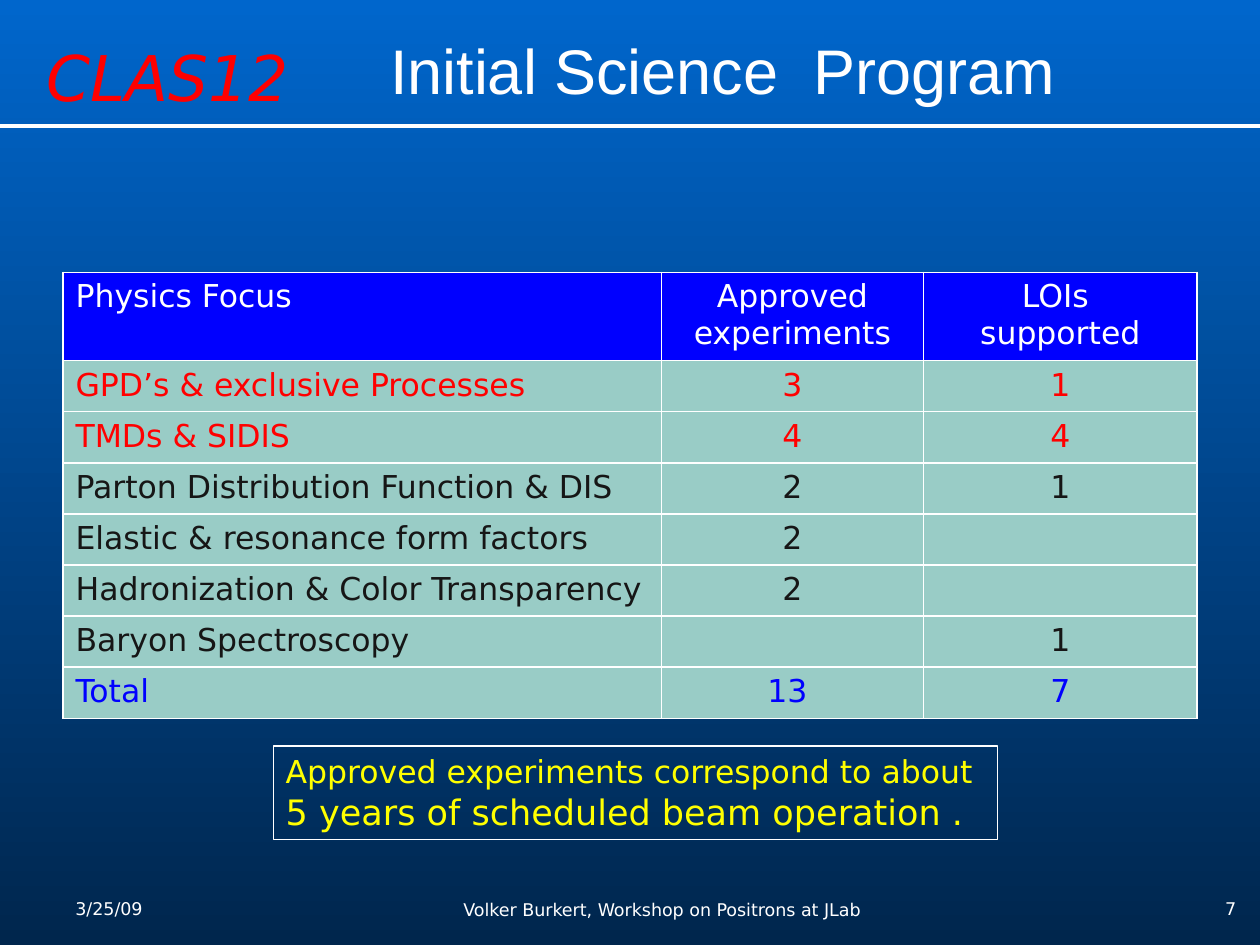
"""Build the CLAS12 initial science program slide."""
from lxml.etree import SubElement
from pptx import Presentation
from pptx.dml.color import RGBColor
from pptx.enum.shapes import MSO_CONNECTOR
from pptx.enum.text import MSO_ANCHOR, PP_ALIGN
from pptx.oxml.ns import qn
from pptx.util import Cm, Pt

WHITE = RGBColor(0xFF, 0xFF, 0xFF)
RED = RGBColor(0xFF, 0x00, 0x00)
BLUE = RGBColor(0x00, 0x00, 0xFF)
YELLOW = RGBColor(0xFF, 0xFF, 0x00)
DARK = RGBColor(0x16, 0x16, 0x16)
TEAL = RGBColor(0x99, 0xCC, 0xC6)
SKY = RGBColor(0x00, 0x66, 0xCC)
NAVY = RGBColor(0x00, 0x26, 0x4D)


def add_run(paragraph, text, size, color, font="DejaVu Sans", italic=False):
    run = paragraph.add_run()
    run.text = text
    run.font.size = Pt(size)
    run.font.name = font
    run.font.italic = italic
    run.font.color.rgb = color


def add_text(slide, box, alignment=PP_ALIGN.LEFT, wrap=True):
    shape = slide.shapes.add_textbox(*[Cm(length) for length in box])
    shape.text_frame.word_wrap = wrap
    paragraph = shape.text_frame.paragraphs[0]
    paragraph.alignment = alignment
    return shape, paragraph


presentation = Presentation()
presentation.slide_width = Cm(25.4)
presentation.slide_height = Cm(19.05)
slide = presentation.slides.add_slide(presentation.slide_layouts[6])

background = slide.background.fill
background.gradient()
background.gradient_angle = 270
for stop, color in zip(background.gradient_stops, (SKY, NAVY)):
    stop.color.rgb = color

title, paragraph = add_text(slide, (6.99, 0.2, 14.81, 2.41), PP_ALIGN.CENTER)
title.text_frame.vertical_anchor = MSO_ANCHOR.MIDDLE
add_run(paragraph, " Initial Science  Program", 36, WHITE, "Arial")

rows = [
    (WHITE, "Physics Focus", "Approved experiments", "LOIs \nsupported"),
    (RED, "GPD’s & exclusive Processes", "3", "1"),
    (RED, "TMDs & SIDIS", "4", "4"),
    (DARK, "Parton Distribution Function & DIS", "2", "1"),
    (DARK, "Elastic & resonance form factors", "2", ""),
    (DARK, "Hadronization & Color Transparency", "2", ""),
    (DARK, "Baryon Spectroscopy", "", "1"),
    (BLUE, "Total", "13 ", "7"),
]
table = slide.shapes.add_table(
    len(rows), 3, Cm(1.27), Cm(5.49), Cm(22.86), Cm(8.94)).table
for column, width in zip(table.columns, (12.06, 5.29, 5.51)):
    column.width = Cm(width)
for row_index, (color, *texts) in enumerate(rows):
    table.rows[row_index].height = Cm(1.03 if row_index else 1.73)
    for column_index, text in enumerate(texts):
        cell = table.cell(row_index, column_index)
        properties = cell._tc.get_or_add_tcPr()
        for side in ("a:lnL", "a:lnR", "a:lnT", "a:lnB"):
            border = SubElement(properties, qn(side), w=str(Pt(1)))
            border_fill = SubElement(border, qn("a:solidFill"))
            SubElement(border_fill, qn("a:srgbClr"), val=str(WHITE))
        cell.fill.solid()
        cell.fill.fore_color.rgb = TEAL if row_index else BLUE
        for line_index, line in enumerate(text.split("\n")):
            frame = cell.text_frame
            paragraph = frame.add_paragraph() if line_index else frame.paragraphs[0]
            paragraph.alignment = PP_ALIGN.CENTER if column_index else PP_ALIGN.LEFT
            if line:
                add_run(paragraph, line, 18, color)

detector, paragraph = add_text(slide, (0.69, 0.66, 5.87, 1.8), wrap=False)
add_run(paragraph, "CLAS12", 36, RED, italic=True)

rule = slide.shapes.add_connector(
    MSO_CONNECTOR.STRAIGHT, Cm(0), Cm(2.54), Cm(25.4), Cm(2.54))
rule.line.color.rgb = WHITE
rule.line.width = Pt(2.25)
SubElement(rule._element.spPr, qn("a:effectLst"))

summary, paragraph = add_text(slide, (5.51, 15.04, 14.6, 1.88))
summary.line.color.rgb = WHITE
summary.line.width = Pt(0.75)
add_run(paragraph, "Approved experiments correspond to about ", 18, YELLOW)
add_run(paragraph, "5 years of scheduled beam operation .", 20, YELLOW)

footers = [
    ("3/25/09", (1.27, 17.98, 5.92, 1.27), PP_ALIGN.LEFT),
    ("7", (19.25, 17.98, 5.92, 1.27), PP_ALIGN.RIGHT),
    ("Volker Burkert, Workshop on Positrons at JLab",
     (8.05, 18, 10.59, 1.04), PP_ALIGN.CENTER),
]
for text, box, alignment in footers:
    footer, paragraph = add_text(slide, box, alignment)
    add_run(paragraph, text, 10, WHITE)

presentation.save("out.pptx")
